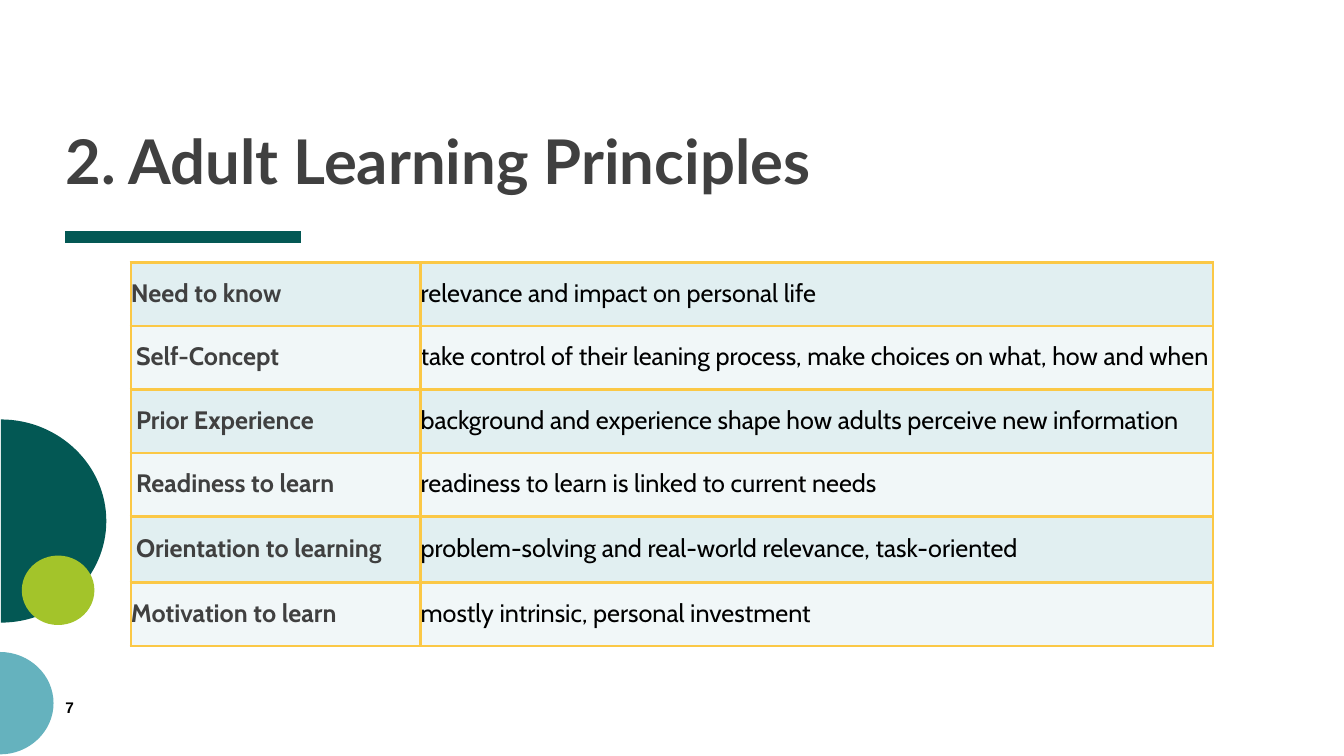
"""Build the slide on adult learning principles."""
from lxml.etree import SubElement
from pptx import Presentation
from pptx.dml.color import RGBColor
from pptx.enum.shapes import MSO_CONNECTOR, MSO_SHAPE
from pptx.enum.text import MSO_ANCHOR, MSO_AUTO_SIZE, PP_ALIGN
from pptx.oxml.ns import qn
from pptx.util import Cm, Pt

DARK_GREEN = RGBColor(0x03, 0x58, 0x54)
LIGHT_BLUE = RGBColor(0x65, 0xB2, 0xBE)
LIME = RGBColor(0xA3, 0xC4, 0x2A)
GOLD = RGBColor(0xFB, 0xC8, 0x46)
GRAY = RGBColor(0x40, 0x40, 0x40)
BLACK = RGBColor(0x00, 0x00, 0x00)
BAND_COLORS = [RGBColor(0xE1, 0xEF, 0xF1), RGBColor(0xF1, 0xF7, 0xF8)]

ARC_HANDLE = 0.55
PRINCIPLES = [
    ("Need to know", "relevance and impact on personal life", 0),
    ("Self-Concept", "take control of their leaning process, make choices on what, how and when", 0.13),
    ("Prior Experience", "background and experience shape how adults perceive new information", 0.13),
    ("Readiness to learn", "readiness to learn is linked to current needs", 0.13),
    ("Orientation to learning", "problem-solving and real-world relevance, task-oriented", 0.13),
    ("Motivation to learn", "mostly intrinsic, personal investment", 0),
]


def write_text(frame, text, *, size, font, color, bold=False, spacing=1.0):
    frame.text = text
    paragraph = frame.paragraphs[0]
    paragraph.alignment = PP_ALIGN.LEFT
    paragraph.line_spacing = spacing
    run_font = paragraph.runs[0].font
    run_font.size = Pt(size)
    run_font.name = font
    run_font.bold = bold
    run_font.color.rgb = color


def paint(shape, color):
    shape.shadow.inherit = False
    shape.fill.solid()
    shape.fill.fore_color.rgb = color
    shape.line.fill.background()


presentation = Presentation()
presentation.slide_width = Cm(33.87)
presentation.slide_height = Cm(19.05)
slide = presentation.slides.add_slide(presentation.slide_layouts[5])
shapes = slide.shapes

title = shapes.title
title.left, title.top, title.width, title.height = Cm(1.65), Cm(0.28), Cm(30.2), Cm(4.67)
write_text(title.text_frame, "2. Adult Learning Principles",
           size=44, font="Lato", color=GRAY, bold=True, spacing=0.8)
title.text_frame.vertical_anchor = MSO_ANCHOR.BOTTOM

accent_line = shapes.add_connector(MSO_CONNECTOR.STRAIGHT, Cm(1.65), Cm(5.97), Cm(7.58), Cm(5.97))
accent_line.line.color.rgb = DARK_GREEN
accent_line.line.width = Pt(8)
SubElement(accent_line._element.spPr, qn("a:effectLst"))

for left, center_y, radius_x, radius_y, color in [
    (0.02, 13.13, 2.66, 2.56, DARK_GREEN),
    (0, 17.72, 1.35, 1.29, LIGHT_BLUE),
]:
    builder = shapes.build_freeform(Cm(left), Cm(center_y - radius_y))
    builder.add_line_segments([
        (Cm(left + radius_x), Cm(center_y)),
        (Cm(left), Cm(center_y + radius_y)),
        (Cm(left), Cm(center_y)),
    ])
    half_disc = builder.convert_to_shape()
    paint(half_disc, color)
    quarter_arcs = [
        [(ARC_HANDLE, 0), (1, 1 - ARC_HANDLE), (1, 1)],
        [(1, 1 + ARC_HANDLE), (ARC_HANDLE, 2), (0, 2)],
    ]
    segments = list(half_disc._element.iter(qn("a:lnTo")))
    for segment, arc in zip(segments, quarter_arcs):
        curve = segment.makeelement(qn("a:cubicBezTo"))
        for x, y in arc:
            SubElement(curve, qn("a:pt"), x=str(Cm(x * radius_x)), y=str(Cm(y * radius_y)))
        segment.getparent().replace(segment, curve)

lime_disc = shapes.add_shape(MSO_SHAPE.OVAL, Cm(0.55), Cm(14), Cm(1.83), Cm(1.75))
paint(lime_disc, LIME)

row_heights = [1.6, 1.6, 1.6, 1.6, 1.67, 1.6]
table_frame = shapes.add_table(len(PRINCIPLES), 2, Cm(3.3), Cm(6.61), Cm(27.27), Cm(sum(row_heights)))
table = table_frame.table
table.first_row = False
table.horz_banding = False
table.columns[0].width = Cm(7.3)
table.columns[1].width = Cm(19.97)

for row, (principle, meaning, indent) in enumerate(PRINCIPLES):
    table.rows[row].height = Cm(row_heights[row])
    for column, text in enumerate((principle, meaning)):
        cell = table.cell(row, column)
        is_label = column == 0
        cell.margin_left = Cm(indent) if is_label else 0
        cell.margin_right = cell.margin_top = cell.margin_bottom = 0
        cell.vertical_anchor = MSO_ANCHOR.MIDDLE
        write_text(cell.text_frame, text, size=18, font="Cabin",
                   color=GRAY if is_label else BLACK, bold=is_label, spacing=0.9)
        properties = cell._tc.get_or_add_tcPr()
        for side in ("a:lnL", "a:lnR", "a:lnT", "a:lnB"):
            border = SubElement(properties, qn(side), w=str(Pt(2)))
            border_fill = SubElement(border, qn("a:solidFill"))
            SubElement(border_fill, qn("a:srgbClr"), val=str(GOLD))
        cell.fill.solid()
        cell.fill.fore_color.rgb = BAND_COLORS[row % 2]

page_number = shapes.add_textbox(Cm(1.65), Cm(17.58), Cm(0.36), Cm(0.46))
write_text(page_number.text_frame, "7", size=11, font="Arial", color=BLACK, bold=True)

for frame in (title.text_frame, page_number.text_frame):
    frame.margin_left = frame.margin_right = frame.margin_top = frame.margin_bottom = 0
    frame.word_wrap = True
    frame.auto_size = MSO_AUTO_SIZE.NONE

presentation.save("out.pptx")
